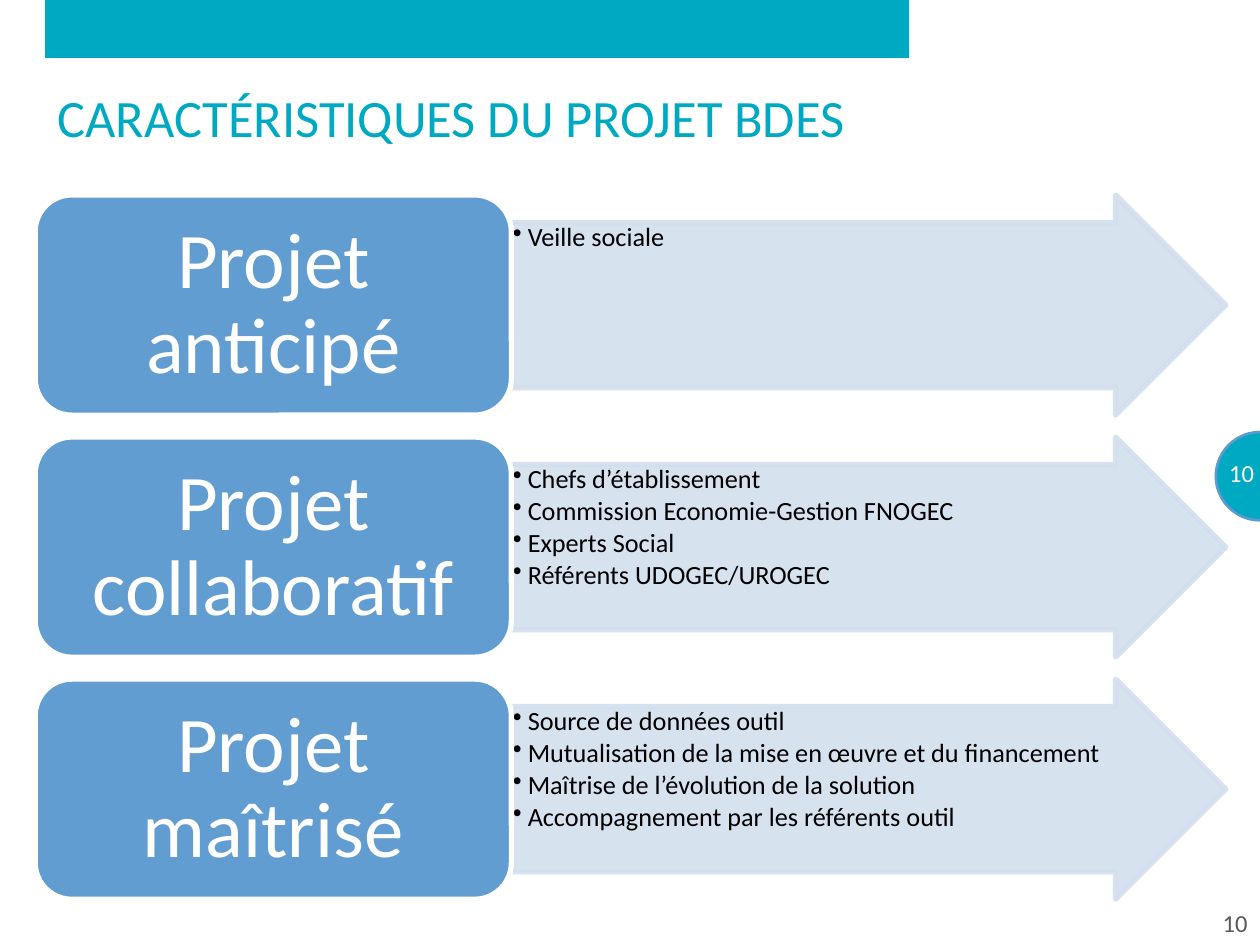
"""Build the slide on the three characteristics of the BDES project."""
from lxml import etree
from pptx import Presentation, util as u
from pptx.dml.color import RGBColor
from pptx.enum import shapes, text
from pptx.oxml.ns import qn

FONT = "Calibri"
TEAL, BLUE, PALE, WHITE, BLACK, GREY = "00A9C2", "629DD1", "D3DFEE", "FFFFFF", "000000", "595959"
TITLE = "CARACTÉRISTIQUES DU PROJET BDES"
PAGE = "10"
ROWS = [
    ("Projet anticipé", ["Veille sociale"]),
    ("Projet collaboratif", [
        "Chefs d’établissement",
        "Commission Economie-Gestion FNOGEC",
        "Experts Social",
        "Référents UDOGEC/UROGEC",
    ]),
    ("Projet maîtrisé", [
        "Source de données outil",
        "Mutualisation de la mise en œuvre et du financement",
        "Maîtrise de l’évolution de la solution",
        "Accompagnement par les référents outil",
    ]),
]
PAGE_NUMBERS = [((24.43, 9.02, 1.1, 1.02), WHITE), ((22.43, 18.14, 2.97, 0.91), GREY)]
ROW_TOP, ROW_STEP, ROW_HEIGHT = 3.93, 4.88, 4.44
LABEL_LEFT, LABEL_WIDTH, ARROW_WIDTH = 0.71, 9.6, 14.4


def colour(value):
    return RGBColor.from_string(value)


def place(shape, box):
    shape.left, shape.top, shape.width, shape.height = (u.Cm(length) for length in box)


def add_filled(slide, kind, box, fill, line=None, line_width=0):
    shape = slide.shapes.add_shape(kind, *(u.Cm(length) for length in box))
    shape.shadow.inherit = False
    shape.fill.solid()
    shape.fill.fore_color.rgb = colour(fill)
    if line:
        shape.line.color.rgb = colour(line)
        shape.line.width = u.Pt(line_width)
    else:
        shape.line.fill.background()
    return shape


def set_opacity(shape, percent):
    for element in shape._element.spPr.iter(qn("a:srgbClr")):
        etree.SubElement(element, qn("a:alpha"), val=str(percent * 1000))


def add_bullet(paragraph):
    properties = paragraph._p.get_or_add_pPr()
    properties.set("marL", str(u.Cm(0.3)))
    properties.set("indent", str(-u.Cm(0.3)))
    etree.SubElement(properties, qn("a:buChar"), char="•")


def write(shape, lines, size, ink, align, anchor, margins=(0.25, 0.13),
          bullets=False, spacing=None, after=0):
    frame = shape.text_frame
    frame.word_wrap = True
    frame.vertical_anchor = anchor
    frame.margin_left = frame.margin_right = u.Cm(margins[0])
    frame.margin_top = frame.margin_bottom = u.Cm(margins[1])
    for index, line in enumerate(lines):
        paragraph = frame.add_paragraph() if index else frame.paragraphs[0]
        if bullets:
            add_bullet(paragraph)
        paragraph.alignment = align
        paragraph.line_spacing = spacing
        paragraph.space_before = u.Pt(0)
        paragraph.space_after = u.Pt(after)
        run = paragraph.add_run()
        run.text = line
        run.font.name = FONT
        run.font.size = u.Pt(size)
        run.font.color.rgb = colour(ink)


def add_row(slide, top, label, points):
    arrow = add_filled(slide, shapes.MSO_SHAPE.RIGHT_ARROW,
                       (LABEL_LEFT + LABEL_WIDTH, top, ARROW_WIDTH, ROW_HEIGHT), PALE, PALE, 3)
    arrow.adjustments[0], arrow.adjustments[1] = 0.75, 0.5
    set_opacity(arrow, 90)
    write(arrow, points, 15, BLACK, text.PP_ALIGN.LEFT, text.MSO_ANCHOR.TOP,
          (0.03, 0.03), bullets=True, spacing=0.9, after=2)
    card = add_filled(slide, shapes.MSO_SHAPE.ROUNDED_RECTANGLE,
                      (LABEL_LEFT, top, LABEL_WIDTH, ROW_HEIGHT), BLUE, WHITE, 3)
    write(card, [label], 45, WHITE, text.PP_ALIGN.CENTER, text.MSO_ANCHOR.MIDDLE,
          (0.48, 0.24), spacing=0.9)


def main():
    presentation = Presentation()
    presentation.slide_width, presentation.slide_height = u.Cm(25.4), u.Cm(19.05)
    slide = presentation.slides.add_slide(presentation.slide_layouts[5])

    add_filled(slide, shapes.MSO_SHAPE.RECTANGLE, (0.91, 0, 17.42, 1.17), TEAL)
    add_filled(slide, shapes.MSO_SHAPE.OVAL, (24.51, 8.71, 1.78, 1.78), TEAL, "5D9ACF", 1.5)
    for box, ink in PAGE_NUMBERS:
        number = slide.shapes.add_textbox(*(u.Cm(length) for length in box))
        write(number, [PAGE], 14, ink, text.PP_ALIGN.RIGHT, text.MSO_ANCHOR.MIDDLE)

    title = slide.shapes.title
    place(title, (0.91, 1.52, 23.6, 1.96))
    write(title, [TITLE], 30, TEAL, text.PP_ALIGN.LEFT, text.MSO_ANCHOR.TOP, (0.25, 0.19))

    for index, (label, points) in enumerate(ROWS):
        add_row(slide, ROW_TOP + index * ROW_STEP, label, points)
    presentation.save("out.pptx")


if __name__ == "__main__":
    main()
